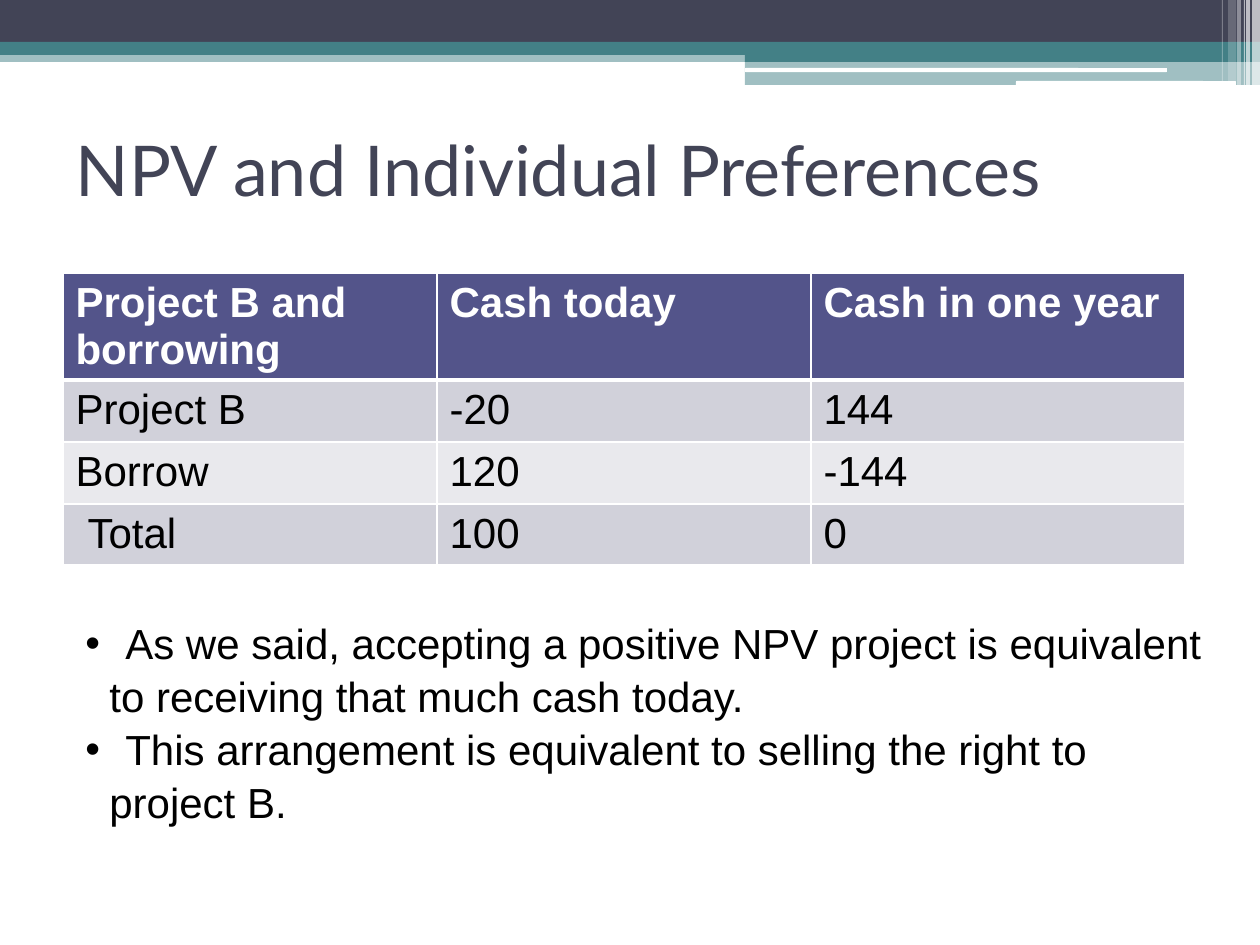
from dataclasses import dataclass

from lxml.etree import SubElement
from pptx import Presentation
from pptx.dml.color import RGBColor
from pptx.enum.shapes import MSO_SHAPE
from pptx.enum.text import MSO_ANCHOR, MSO_AUTO_SIZE, PP_ALIGN
from pptx.oxml.ns import qn
from pptx.util import Pt

EMU_PER_PX = 914400 / 126


@dataclass(frozen=True)
class Theme:
    navy: str = "424456"
    teal: str = "438086"
    white: str = "FFFFFF"
    black: str = "000000"
    header: str = "53548A"
    odd_row: str = "D1D1DA"
    even_row: str = "E9E9ED"
    title_font: str = "Lato"
    body_font: str = "Arial"
    title_size: int = 40
    body_size: int = 24


THEME = Theme()

# left, top, width, height, colour, opacity in percent
BANDS = [
    (0, 50, 1260, 12, THEME.teal, 50),
    (0, 0, 1260, 42, THEME.navy, 100),
    (0, 42, 1260, 13, THEME.teal, 100),
    (745, 49, 515, 13, THEME.teal, 100),
    (745, 61, 515, 24, THEME.teal, 50),
]
ROUNDED_BARS = [(745, 68, 422, 4), (1016, 81, 220, 5)]
# left, width, height, opacity in percent
STRIPES = [
    (1252, 8, 85, 65),
    (1246, 4, 85, 65),
    (1244, 1, 85, 60),
    (1237, 4, 85, 40),
    (1228, 8, 81, 20),
    (1222, 1, 81, 30),
]
TABLE_ROWS = [
    ("Project B and borrowing", "Cash today", "Cash in one year"),
    ("Project B", "-20", "144"),
    ("Borrow", "120", "-144"),
    ("Total", "100", "0"),
]
# text, has a bullet
NOTES = [
    ("As we said, accepting a positive NPV project is equivalent", True),
    ("to receiving that much cash today.", False),
    ("This arrangement is equivalent to selling the right to", True),
    ("project B.", False),
]


def px(length):
    return round(length * EMU_PER_PX)


def box(*lengths):
    return [px(length) for length in lengths]


def write_text(paragraph, text, *, font=THEME.body_font, size=THEME.body_size,
               color=THEME.black, bold=False, indent=0, bullet=False, line_spacing=None):
    """Fill a paragraph; a bullet hangs in the whole width of the indent."""
    run = paragraph.add_run()
    run.text = text
    run.font.name = font
    run.font.size = Pt(size)
    run.font.bold = bold
    run.font.color.rgb = RGBColor.from_string(color)
    paragraph.alignment = PP_ALIGN.LEFT
    if line_spacing:
        paragraph.line_spacing = line_spacing
    properties = paragraph._p.get_or_add_pPr()
    properties.set("marL", str(px(indent)))
    properties.set("indent", str(-px(indent) if bullet else 0))
    if bullet:
        SubElement(properties, qn("a:buFont"), typeface=THEME.body_font)
        SubElement(properties, qn("a:buChar"), char="•")


def add_bar(slide, left, top, width, height, color, opacity=100, kind=MSO_SHAPE.RECTANGLE):
    shape = slide.shapes.add_shape(kind, *box(left, top, width, height))
    shape.shadow.inherit = False
    shape.line.fill.background()
    shape.fill.solid()
    shape.fill.fore_color.rgb = RGBColor.from_string(color)
    if opacity < 100:
        fill_color = shape._element.spPr.find(qn("a:solidFill"))[0]
        SubElement(fill_color, qn("a:alpha"), val=str(opacity * 1000))


def add_banner(slide):
    for band in BANDS:
        add_bar(slide, *band)
    for bar in ROUNDED_BARS:
        add_bar(slide, *bar, THEME.white, kind=MSO_SHAPE.ROUNDED_RECTANGLE)
    for left, width, height, opacity in STRIPES:
        add_bar(slide, left, 0, width, height, THEME.white, opacity)


def format_title(slide, text):
    title = slide.shapes.title
    title.left, title.top, title.width, title.height = box(63, 95, 1134, 147)
    frame = title.text_frame
    frame.auto_size = MSO_AUTO_SIZE.NONE
    frame.vertical_anchor = MSO_ANCHOR.MIDDLE
    write_text(frame.paragraphs[0], text, font=THEME.title_font,
               size=THEME.title_size, color=THEME.navy)


def format_cell(cell, fill, widths):
    """Set the fill and the white borders; widths maps a side to points."""
    properties = cell._tc.get_or_add_tcPr()
    for side, width in widths.items():
        line = SubElement(properties, qn(f"a:ln{side}"), w=str(Pt(width)))
        SubElement(SubElement(line, qn("a:solidFill")), qn("a:srgbClr"), val=THEME.white)
    cell.fill.solid()
    cell.fill.fore_color.rgb = RGBColor.from_string(fill)


def add_cash_table(slide):
    row_heights = [107, 62, 62, 61]
    column_width = 374
    columns = len(TABLE_ROWS[0])
    table = slide.shapes.add_table(
        len(TABLE_ROWS), columns,
        *box(63, 273, column_width * columns, sum(row_heights))).table
    for column in table.columns:
        column.width = px(column_width)
    for index, (values, height) in enumerate(zip(TABLE_ROWS, row_heights)):
        table.rows[index].height = px(height)
        is_header = index == 0
        fill = THEME.header if is_header else (THEME.even_row, THEME.odd_row)[index % 2]
        widths = {"L": 1, "R": 1, "T": 3 if index == 1 else 1, "B": 3 if is_header else 1}
        for cell, value in zip(table.rows[index].cells, values):
            format_cell(cell, fill, widths)
            write_text(cell.text_frame.paragraphs[0], value, bold=is_header,
                       color=THEME.white if is_header else THEME.black,
                       indent=12 if value == "Total" else 0)


def add_notes_box(slide):
    frame = slide.shapes.add_textbox(*box(73, 609, 1144, 217)).text_frame
    frame.word_wrap = True
    for index, (text, bullet) in enumerate(NOTES):
        paragraph = frame.add_paragraph() if index else frame.paragraphs[0]
        write_text(paragraph, text, bullet=bullet, indent=40 if bullet else 24,
                   line_spacing=1.05)


def main():
    presentation = Presentation()
    presentation.slide_width, presentation.slide_height = box(1260, 945)
    slide = presentation.slides.add_slide(presentation.slide_layouts[5])
    add_banner(slide)
    format_title(slide, "NPV and Individual Preferences")
    add_cash_table(slide)
    add_notes_box(slide)
    presentation.save("out.pptx")


if __name__ == "__main__":
    main()
